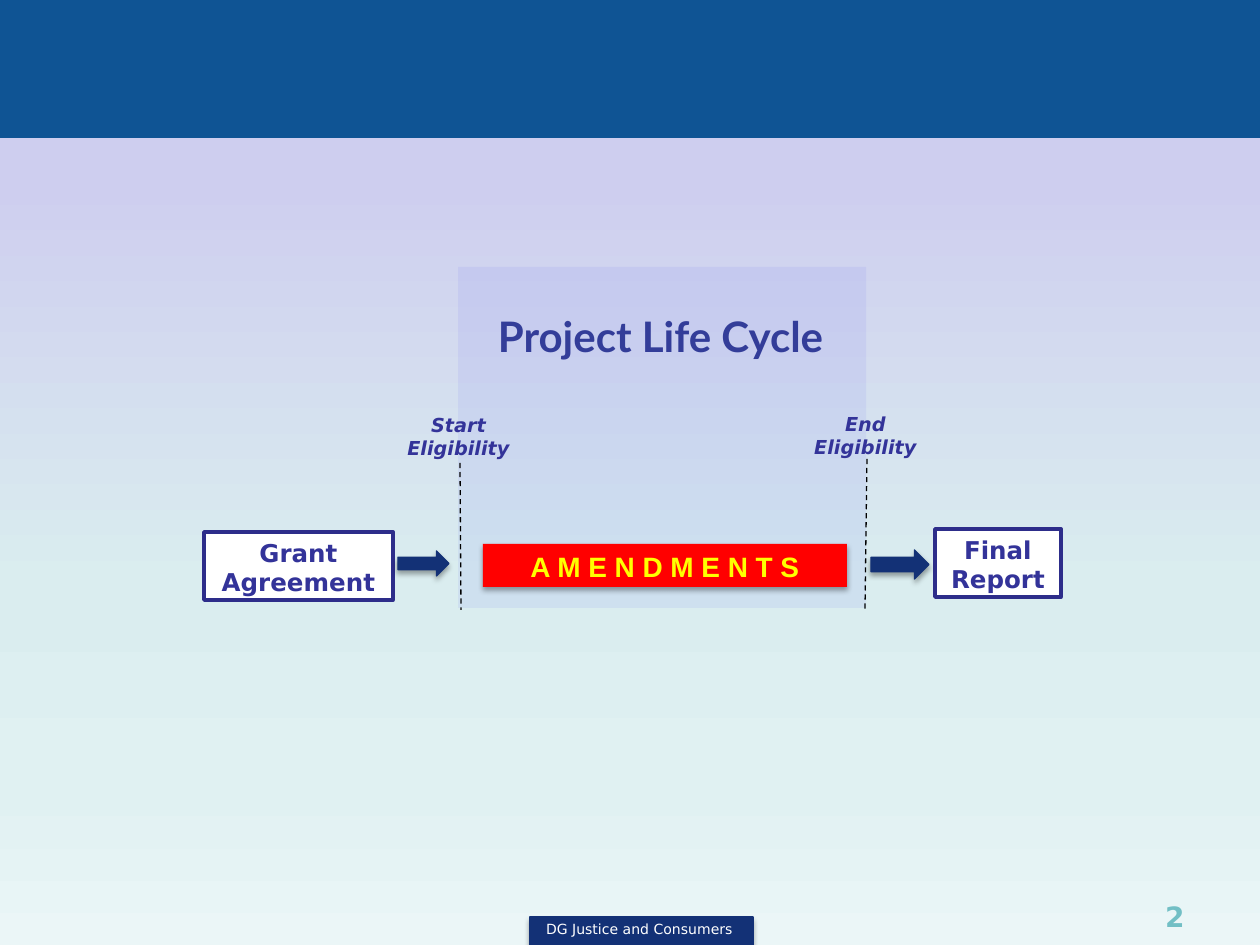
from dataclasses import dataclass
from typing import NamedTuple

from lxml import etree
from pptx import Presentation, util as u
from pptx.dml import color
from pptx.enum import dml, shapes, text
from pptx.oxml import ns

EMU_PER_PX = 914400 / 126


@dataclass(frozen=True)
class Theme:
    band: str = "0F5494"
    navy: str = "133176"
    border: str = "2D2D8A"
    label: str = "333399"
    title: str = "333D99"
    number: str = "72BFC5"
    white: str = "FFFFFF"
    black: str = "000000"
    alert: str = "FF0000"
    alert_text: str = "FFFF00"
    period: str = "0000FF"
    background: tuple = ((19, "CECEEF"), (62, "DAEDEF"), (83, "E0F1F2"), (100, "EBF6F7"))
    body_font: str = "DejaVu Sans"
    title_font: str = "Lato"
    alert_font: str = "Arial"
    title_size: int = 24
    alert_size: int = 16
    box_size: int = 14
    label_size: int = 11
    footer_size: int = 8


class Area(NamedTuple):
    left: int
    top: int
    width: int
    height: int


class Stage(NamedTuple):
    name: str
    area: Area


class Limit(NamedTuple):
    name: str
    area: Area
    start: tuple
    end: tuple


THEME = Theme()
STAGES = (
    Stage("Grant Agreement", Area(204, 532, 189, 68)),
    Stage("Final Report", Area(935, 529, 126, 68)),
)
LIMITS = (
    Limit("Start Eligibility", Area(388, 407, 141, 47), (460, 463), (461, 610)),
    Limit("End Eligibility", Area(796, 406, 139, 52), (867, 459), (865, 610)),
)
ARROWS = (Area(398, 551, 51, 25), Area(871, 550, 58, 29))


def px(length: int) -> u.Emu:
    return u.Emu(round(length * EMU_PER_PX))


def rgb(value: str) -> color.RGBColor:
    return color.RGBColor.from_string(value)


def add(parent, tag: str, **attributes):
    return etree.SubElement(parent, ns.qn(tag), attributes)


def write(box, words: str, *, size: int, tint: str, font: str = THEME.body_font,
          bold: bool = False, italic: bool = False,
          align=text.PP_ALIGN.CENTER, inset_top: int = 6) -> None:
    frame = box.text_frame
    frame.word_wrap = True
    frame.auto_size = text.MSO_AUTO_SIZE.NONE
    frame.vertical_anchor = text.MSO_ANCHOR.TOP
    frame.margin_top = px(inset_top)
    para = frame.paragraphs[0]
    para.alignment = align
    para.space_before = u.Pt(0)
    span = para.add_run()
    span.text = words
    span.font.name = font
    span.font.size = u.Pt(size)
    span.font.bold = bold
    span.font.italic = italic
    span.font.color.rgb = rgb(tint)


def add_shadow(box) -> None:
    for effects in box._element.spPr.findall(ns.qn("a:effectLst")):
        shadow = add(effects, "a:outerShdw", blurRad=str(u.Pt(3.1)), dist=str(u.Pt(1.8)),
                     dir="5400000", algn="ctr", rotWithShape="0")
        shade = add(shadow, "a:srgbClr", val=THEME.black)
        add(shade, "a:alpha", val="35000")


def draw_shape(page, area: Area, kind=shapes.MSO_SHAPE.RECTANGLE, *, fill: str = "",
               line: str = "", weight: float = 0.75, shadow: bool = False, alpha: int = 100):
    box = page.shapes.add_shape(kind, *map(px, area))
    box.shadow.inherit = False
    if fill:
        box.fill.solid()
        box.fill.fore_color.rgb = rgb(fill)
    else:
        box.fill.background()
    if line:
        box.line.color.rgb = rgb(line)
        box.line.width = u.Pt(weight)
    else:
        box.line.fill.background()
    if alpha < 100:
        solid = box._element.spPr.find(ns.qn("a:solidFill"))
        add(solid[0], "a:alpha", val=str(alpha * 1000))
    if shadow:
        add_shadow(box)
    return box


def draw_text(page, area: Area, words: str, **style) -> None:
    write(page.shapes.add_textbox(*map(px, area)), words, **style)


def draw_stage(page, stage: Stage) -> None:
    box = draw_shape(page, stage.area, shapes.MSO_SHAPE.FLOWCHART_PROCESS,
                     fill=THEME.white, line=THEME.border, weight=2)
    write(box, stage.name, size=THEME.box_size, tint=THEME.label, bold=True)


def draw_limit(page, limit: Limit) -> None:
    box = draw_shape(page, limit.area, shapes.MSO_SHAPE.FLOWCHART_PROCESS)
    write(box, limit.name, size=THEME.label_size, tint=THEME.label, bold=True, italic=True)
    line = page.shapes.add_connector(shapes.MSO_CONNECTOR.STRAIGHT,
                                     *map(px, limit.start + limit.end))
    line.line.color.rgb = rgb(THEME.black)
    line.line.width = u.Pt(0.75)
    line.line.dash_style = dml.MSO_LINE.DASH
    add(line._element.spPr, "a:effectLst")


def paint_background(page) -> None:
    fill = page.background.fill
    fill.gradient()
    fill.gradient_angle = 270
    stops = page._element.find(".//" + ns.qn("a:gsLst"))
    for stop in list(stops):
        stops.remove(stop)
    for position, tint in THEME.background:
        stop = add(stops, "a:gs", pos=str(position * 1000))
        add(stop, "a:srgbClr", val=tint)


def place_title(page) -> None:
    title = page.shapes.title
    title.left, title.top, title.width, title.height = map(px, Area(396, 304, 529, 58))
    write(title, "Project Life Cycle", size=THEME.title_size, tint=THEME.title,
          font=THEME.title_font, bold=True)
    page.shapes._spTree.append(title._element)


def main() -> None:
    deck = Presentation()
    deck.slide_width, deck.slide_height = px(1260), px(945)
    page = deck.slides.add_slide(deck.slide_layouts.get_by_name("Title Only"))
    paint_background(page)

    draw_shape(page, Area(0, 0, 1260, 137), fill=THEME.band, line=THEME.band)
    draw_shape(page, Area(530, 917, 223, 28), fill=THEME.navy, line=THEME.navy, shadow=True)
    draw_text(page, Area(445, 915, 389, 45), "DG Justice and Consumers",
              size=THEME.footer_size, tint=THEME.white)

    draw_shape(page, Area(458, 267, 408, 341), shapes.MSO_SHAPE.FLOWCHART_PROCESS,
               fill=THEME.period, alpha=5)
    for stage in STAGES:
        draw_stage(page, stage)
    for limit in LIMITS:
        draw_limit(page, limit)
    amendments = draw_shape(page, Area(483, 544, 364, 43), fill=THEME.alert, shadow=True)
    write(amendments, "A M E N D M E N T S", size=THEME.alert_size, tint=THEME.alert_text,
          font=THEME.alert_font, bold=True)
    place_title(page)

    draw_text(page, Area(903, 861, 294, 66), "2", size=THEME.alert_size, tint=THEME.number,
              bold=True, align=text.PP_ALIGN.RIGHT, inset_top=39)
    for area in ARROWS:
        draw_shape(page, area, shapes.MSO_SHAPE.RIGHT_ARROW,
                   fill=THEME.navy, line=THEME.navy, shadow=True)
    deck.save("out.pptx")


if __name__ == "__main__":
    main()
